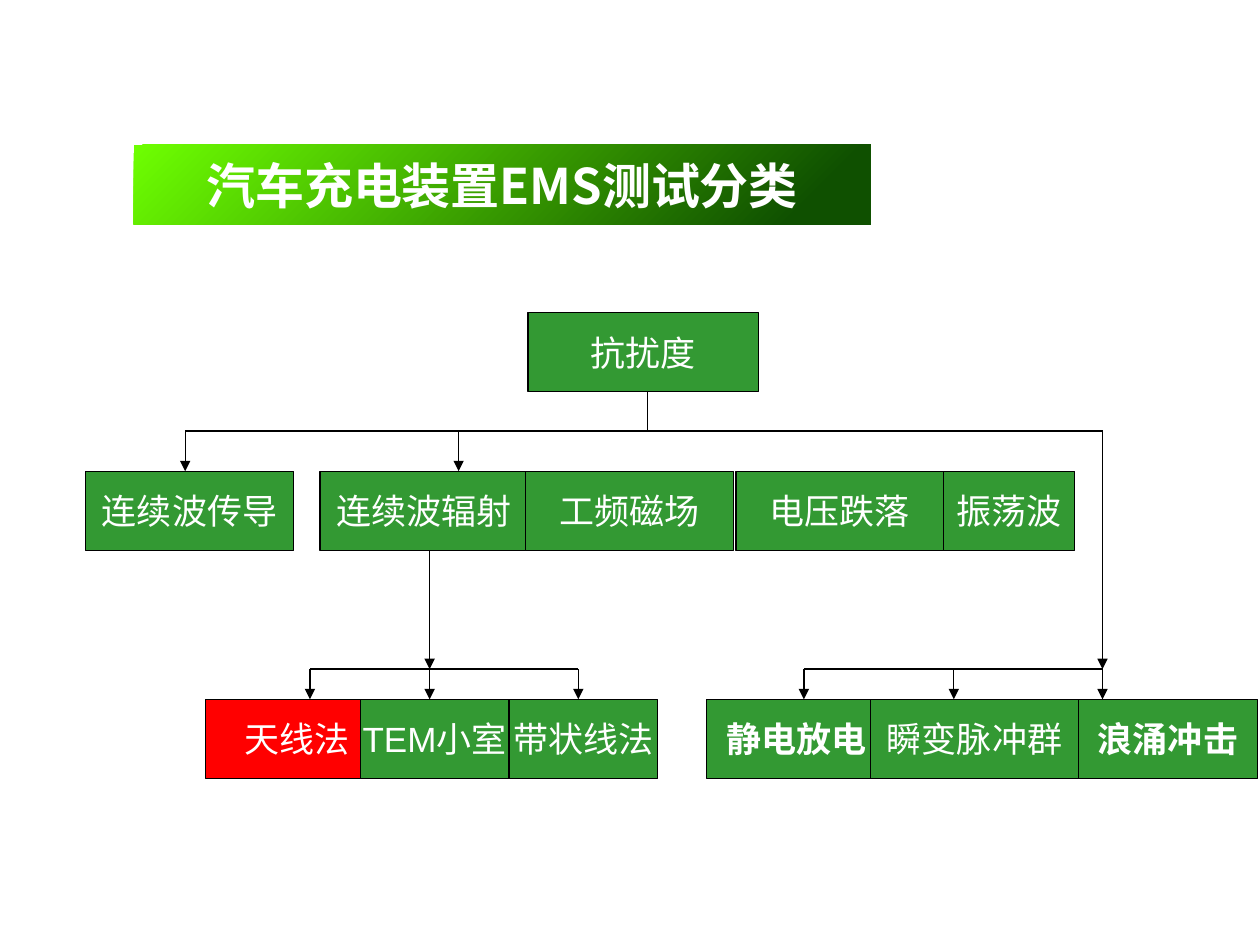
from lxml import etree
from pptx import Presentation
from pptx import util as u
from pptx.dml.color import RGBColor
from pptx.enum import shapes, text
from pptx.oxml.ns import qn

GREEN, RED, BLACK, WHITE = "339933", "FF0000", "000000", "FFFFFF"
CJK = "Noto Sans CJK SC"
TITLE = "汽车充电装置EMS测试分类"
TITLE_STOPS = [(0, "6EFF01"), (0.9, "0F5000")]
BOX_HEIGHT = 0.63
ROOT_TOP, TYPE_TOP, METHOD_TOP = 2.48, 3.74, 5.55
TYPE_BUS, METHOD_BUS = 3.42, 5.31

ROWS = [
    (ROOT_TOP, [("抗扰度", 4.19, 1.83, {})]),
    (TYPE_TOP, [
        ("连续波传导", 0.68, 1.65, {}),
        ("连续波辐射", 2.54, 1.65, {}),
        ("工频磁场", 4.17, 1.65, {}),
        ("电压跌落", 5.84, 1.65, {}),
        ("振荡波", 7.49, 1.04, {}),
    ]),
    (METHOD_TOP, [
        ("天线法", 1.63, 1.46, {"color": RED}),
        ("TEM小室", 2.86, 1.18, {}),
        ("带状线法", 4.04, 1.18, {}),
        ("静电放电", 5.61, 1.42, {"bold": True}),
        ("瞬变脉冲群", 6.91, 1.65, {}),
        ("浪涌冲击", 8.56, 1.42, {"bold": True}),
    ]),
]
ROOT_STEM, RADIATION_STEM, TRANSIENT_STEM = 5.14, 3.41, 8.75
BUSES = [
    (TYPE_BUS, 1.47, TRANSIENT_STEM),
    (METHOD_BUS, 2.46, 4.59),
    (METHOD_BUS, 6.38, TRANSIENT_STEM),
]
ARROWS = [
    (TYPE_BUS, TYPE_TOP, [1.47, 3.64]),
    (TYPE_TOP + BOX_HEIGHT, METHOD_BUS, [RADIATION_STEM]),
    (TYPE_BUS, METHOD_BUS, [TRANSIENT_STEM]),
    (METHOD_BUS, METHOD_TOP, [2.46, RADIATION_STEM, 4.59, 6.38, 7.57, TRANSIENT_STEM]),
]


def rgb(value):
    return RGBColor.from_string(value)


def write(shape, words, size=20, font="Arial", bold=False, wrap=False):
    frame = shape.text_frame
    frame.word_wrap = wrap
    frame.auto_size = text.MSO_AUTO_SIZE.NONE
    frame.vertical_anchor = text.MSO_ANCHOR.MIDDLE
    paragraph = frame.paragraphs[0]
    paragraph.alignment = text.PP_ALIGN.CENTER
    run = paragraph.add_run()
    run.text = words
    run.font.size = u.Pt(size)
    run.font.name = font
    run.font.bold = bold
    run.font.color.rgb = rgb(WHITE)
    east_asian = etree.SubElement(run.font._element, qn("a:ea"))
    east_asian.set("typeface", CJK)


def add_title(slide):
    title = slide.shapes.title
    title.left, title.top, title.width, title.height = map(u.Inches, (1.06, 1.15, 5.85, 0.63))
    geometry = etree.SubElement(title._element.spPr, qn("a:prstGeom"), prst="roundRect")
    etree.SubElement(geometry, qn("a:avLst"))
    title.fill.gradient()
    title.fill.gradient_angle = 315
    for stop, (position, color) in zip(title.fill.gradient_stops, TITLE_STOPS):
        stop.position = position
        stop.color.rgb = rgb(color)
    write(title, TITLE, size=28, font=CJK, bold=True, wrap=True)


def add_box(slide, words, left, top, width, color=GREEN, bold=False):
    box = slide.shapes.add_shape(
        shapes.MSO_SHAPE.RECTANGLE, *map(u.Inches, (left, top, width, BOX_HEIGHT)))
    box.shadow.inherit = False
    box.fill.solid()
    box.fill.fore_color.rgb = rgb(color)
    box.line.color.rgb = rgb(BLACK)
    box.line.width = u.Pt(0.75)
    write(box, words, bold=bold)


def add_line(slide, x1, y1, x2, y2, arrow=False):
    line = slide.shapes.add_connector(
        shapes.MSO_CONNECTOR.STRAIGHT, *map(u.Inches, (x1, y1, x2, y2)))
    line.line.color.rgb = rgb(BLACK)
    line.line.width = u.Pt(0.75)
    if arrow:
        etree.SubElement(line.line._get_or_add_ln(), qn("a:tailEnd"), type="triangle")
    etree.SubElement(line._element.spPr, qn("a:effectLst"))


def main():
    presentation = Presentation()
    presentation.slide_width, presentation.slide_height = u.Inches(10), u.Inches(7.5)
    slide = presentation.slides.add_slide(presentation.slide_layouts[5])
    add_title(slide)
    for top, boxes in ROWS:
        for words, left, width, style in boxes:
            add_box(slide, words, left, top, width, **style)
    add_line(slide, ROOT_STEM, ROOT_TOP + BOX_HEIGHT, ROOT_STEM, TYPE_BUS)
    for y, start, end in BUSES:
        add_line(slide, start, y, end, y)
    for start, end, columns in ARROWS:
        for x in columns:
            add_line(slide, x, start, x, end, arrow=True)
    presentation.save("out.pptx")


if __name__ == "__main__":
    main()
